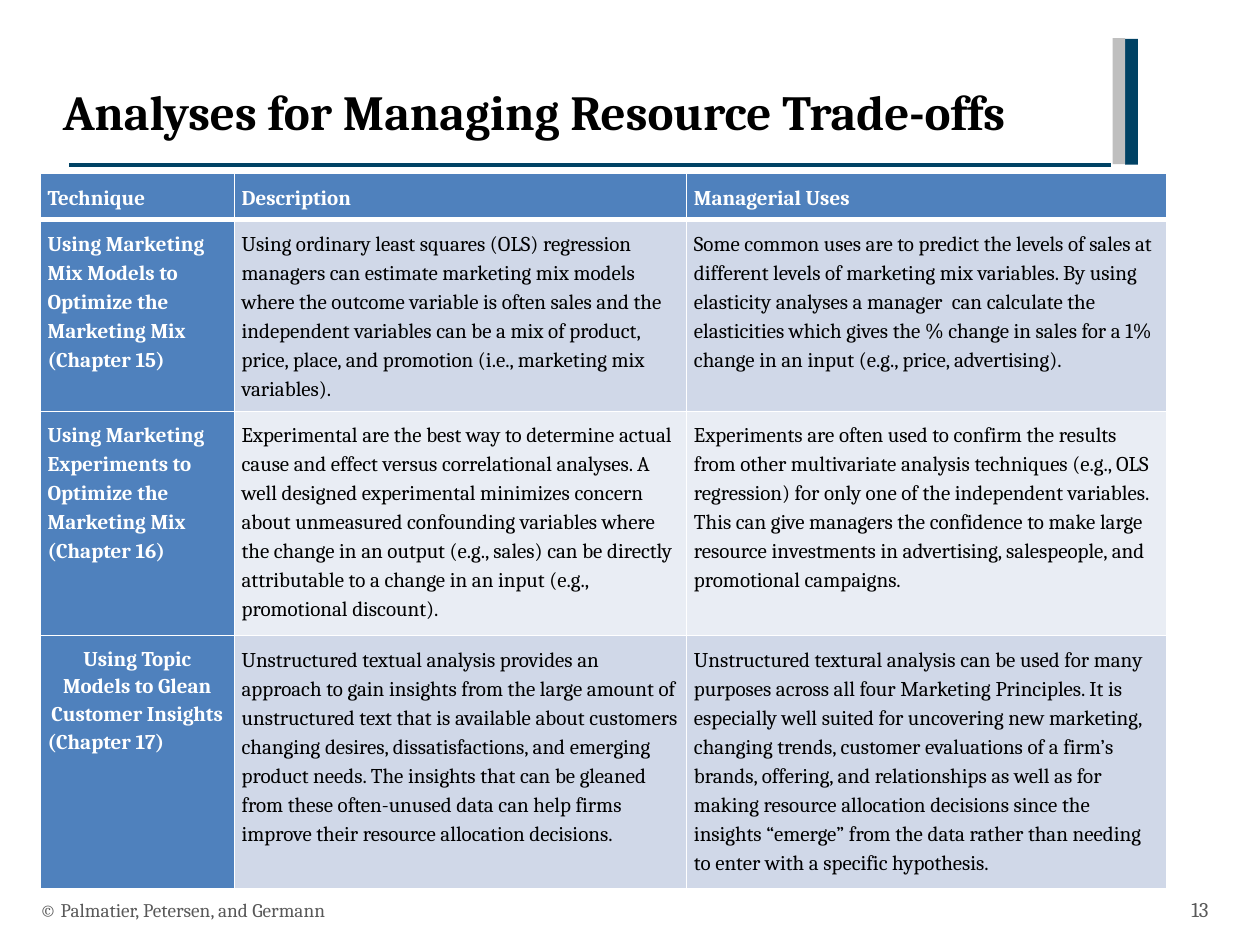
from lxml import etree
from pptx import Presentation
from pptx import util as u
from pptx.dml.color import RGBColor
from pptx.enum import shapes, text
from pptx.oxml import ns

Pt = u.Pt
FONT = "Cambria"
COLORS = {
    "navy": "004264", "silver": "BFBFBF", "black": "000000", "white": "FFFFFF",
    "blue": "4F81BD", "band_dark": "D0D8E8", "band_light": "E9EDF4", "gray": "595959",
}
COLUMN_WIDTHS = [110.9, 258.5, 274.3]
ROW_HEIGHTS = [23, 109.5, 128.2, 144.5]
HEADINGS = ["Technique", "Description", "Managerial Uses"]
ANALYSES = [
    (["Using Marketing Mix Models to Optimize the Marketing Mix", "(Chapter 15)"],
     "Using ordinary least squares (OLS) regression managers can estimate marketing mix "
     "models where the outcome variable is often sales and the independent variables can "
     "be a mix of product, price, place, and promotion (i.e., marketing mix variables).",
     "Some common uses are to predict the levels of sales at different levels of marketing "
     "mix variables. By using elasticity analyses a manager  can calculate the elasticities "
     "which gives the % change in sales for a 1% change in an input (e.g., price, "
     "advertising)."),
    (["Using Marketing Experiments to Optimize the Marketing Mix (Chapter 16)"],
     "Experimental are the best way to determine actual cause and effect versus "
     "correlational analyses. A well designed experimental minimizes concern about "
     "unmeasured confounding variables where the change in an output (e.g., sales) can be "
     "directly attributable to a change in an input (e.g., promotional discount).",
     "Experiments are often used to confirm the results from other multivariate analysis "
     "techniques (e.g., OLS regression) for only one of the independent variables. This "
     "can give managers the confidence to make large resource investments in advertising, "
     "salespeople, and promotional campaigns."),
    (["Using Topic Models to Glean Customer Insights", "(Chapter 17)"],
     "Unstructured textual analysis provides an approach to gain insights from the large "
     "amount of unstructured text that is available about customers changing desires, "
     "dissatisfactions, and emerging product needs. The insights that can be gleaned from "
     "these often-unused data can help firms improve their resource allocation decisions.",
     "Unstructured textural analysis can be used for many purposes across all four "
     "Marketing Principles. It is especially well suited for uncovering new marketing, "
     "changing trends, customer evaluations of a firm’s brands, offering, and "
     "relationships as well as for making resource allocation decisions since the insights "
     "“emerge” from the data rather than needing to enter with a specific hypothesis."),
]


def rgb(name):
    return RGBColor.from_string(COLORS[name])


def write(frame, paragraphs, size=12, color="black", bold=False,
          align=text.PP_ALIGN.LEFT, spacing=None):
    """Fill a text frame with one paragraph per string."""
    frame.word_wrap = True
    for index, words in enumerate(paragraphs):
        paragraph = frame.add_paragraph() if index else frame.paragraphs[0]
        paragraph.alignment = align
        paragraph.line_spacing = spacing
        run = paragraph.add_run()
        run.text = words
        run.font.name = FONT
        run.font.size = Pt(size)
        run.font.bold = bold
        run.font.color.rgb = rgb(color)


def add_label(slide, words, left, top, width, height,
              anchor=text.MSO_ANCHOR.MIDDLE, **style):
    frame = slide.shapes.add_textbox(Pt(left), Pt(top), Pt(width), Pt(height)).text_frame
    frame.vertical_anchor = anchor
    write(frame, [words], **style)


def add_bar(slide, left, top, color):
    bar = slide.shapes.add_shape(shapes.MSO_SHAPE.RECTANGLE,
                                 Pt(left), Pt(top), Pt(7.2), Pt(72))
    bar.shadow.inherit = False
    bar.fill.solid()
    bar.fill.fore_color.rgb = rgb(color)
    bar.line.fill.background()


def add_rule(slide, left, right, y):
    rule = slide.shapes.add_connector(shapes.MSO_CONNECTOR.STRAIGHT,
                                      Pt(left), Pt(y), Pt(right), Pt(y))
    rule.line.color.rgb = rgb("navy")
    rule.line.width = Pt(2)
    etree.SubElement(rule._element.spPr, ns.qn("a:effectLst"))


def set_borders(cell, widths):
    """Draw white borders; they must come before the fill in the cell properties."""
    properties = cell._tc.get_or_add_tcPr()
    for index, (side, width) in enumerate(widths.items()):
        line = etree.Element(ns.qn(f"a:ln{side}"), w=str(Pt(width)))
        fill = etree.SubElement(line, ns.qn("a:solidFill"))
        etree.SubElement(fill, ns.qn("a:srgbClr"), val=COLORS["white"])
        properties.insert(index, line)


def format_cell(cell, fill, top=1, bottom=1, margin_top=4.5, margin_bottom=1.5):
    cell.margin_left = cell.margin_right = Pt(4.2)
    cell.margin_top, cell.margin_bottom = Pt(margin_top), Pt(margin_bottom)
    cell.fill.solid()
    cell.fill.fore_color.rgb = rgb(fill)
    set_borders(cell, {"L": 1, "R": 1, "T": top, "B": bottom})


def add_analysis_table(slide):
    table = slide.shapes.add_table(len(ROW_HEIGHTS), len(COLUMN_WIDTHS), Pt(23), Pt(98.8),
                                   Pt(sum(COLUMN_WIDTHS)), Pt(sum(ROW_HEIGHTS))).table
    for column, width in zip(table.columns, COLUMN_WIDTHS):
        column.width = Pt(width)
    for row, height in zip(table.rows, ROW_HEIGHTS):
        row.height = Pt(height)

    # Header row
    for column, heading in enumerate(HEADINGS):
        cell = table.cell(0, column)
        format_cell(cell, "blue", bottom=3, margin_top=5, margin_bottom=4.5)
        cell.vertical_anchor = text.MSO_ANCHOR.MIDDLE
        write(cell.text_frame, [heading], color="white", bold=True, spacing=1.2)

    # One row per analysis, in alternating bands
    last = len(ANALYSES)
    for row, (technique, *details) in enumerate(ANALYSES, start=1):
        top = 3 if row == 1 else 1
        name_cell = table.cell(row, 0)
        format_cell(name_cell, "blue", top)
        write(name_cell.text_frame, technique, color="white", bold=True,
              spacing=1.15 if row == last else 1.2)
        if row == last:
            name_cell.text_frame.paragraphs[0].alignment = text.PP_ALIGN.CENTER
        for column, detail in enumerate(details, start=1):
            cell = table.cell(row, column)
            format_cell(cell, "band_dark" if row % 2 else "band_light", top)
            write(cell.text_frame, [detail], spacing=1.2)


def main():
    deck = Presentation()
    deck.slide_width, deck.slide_height = Pt(720), Pt(540)
    slide = deck.slides.add_slide(deck.slide_layouts[6])

    # Title with its rule and corner bars
    add_rule(slide, 39.6, 635, 94.4)
    add_bar(slide, 643, 22.2, "navy")
    add_bar(slide, 635.8, 21.8, "silver")
    add_label(slide, "Analyses for Managing Resource Trade-offs", 28.8, 43.2, 594.7, 63.4,
              anchor=text.MSO_ANCHOR.TOP, size=28, bold=True)

    add_analysis_table(slide)

    # Footer
    add_label(slide, "© Palmatier, Petersen, and Germann", 15.8, 505.4, 482.4, 28.8,
              size=11, color="gray")
    add_label(slide, "13", 653.8, 505.4, 43.9, 28.8, color="gray",
              align=text.PP_ALIGN.RIGHT)

    deck.save("out.pptx")


if __name__ == "__main__":
    main()
